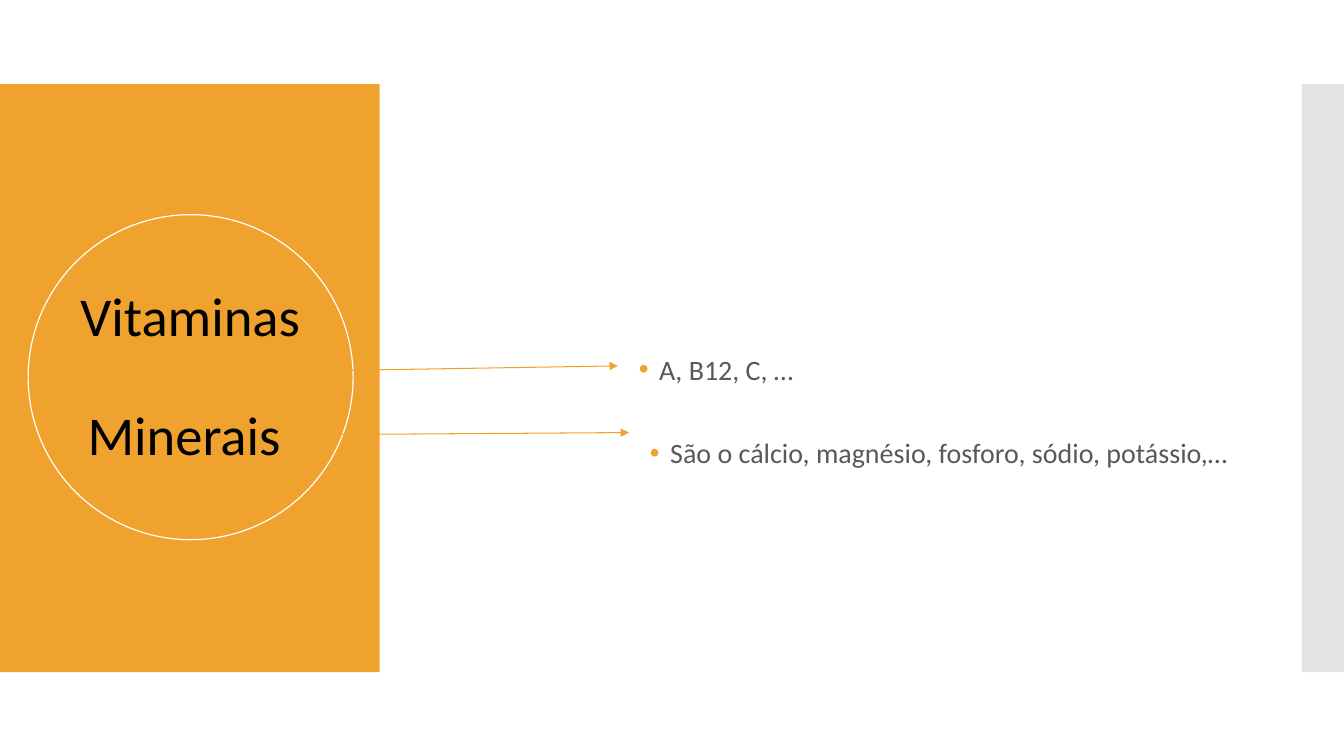
from lxml import etree
from pptx import Presentation
from pptx.dml.color import RGBColor
from pptx.enum.shapes import MSO_CONNECTOR, MSO_SHAPE
from pptx.enum.text import MSO_ANCHOR, PP_ALIGN
from pptx.oxml.ns import qn
from pptx.util import Cm, Pt

ORANGE = RGBColor(0xF0, 0xA2, 0x2E)
SILVER = RGBColor(0xC8, 0xC8, 0xC8)
GRAY = RGBColor(0x59, 0x59, 0x59)
BLACK = RGBColor(0, 0, 0)
WHITE = RGBColor(0xFF, 0xFF, 0xFF)
RECT = MSO_SHAPE.RECTANGLE
OVAL = MSO_SHAPE.OVAL
STRAIGHT = MSO_CONNECTOR.STRAIGHT
MIDDLE = MSO_ANCHOR.MIDDLE
LEFT = PP_ALIGN.LEFT
CENTER = PP_ALIGN.CENTER
FONT = "Calibri"


def add_shape(slide, kind, box, fill, alpha=None, line=None):
    shape = slide.shapes.add_shape(kind, *map(Cm, box))
    shape.shadow.inherit = False
    shape.fill.solid()
    shape.fill.fore_color.rgb = fill
    if alpha is not None:
        color = shape.fill._xPr.find(qn("a:solidFill"))[0]
        etree.SubElement(color, qn("a:alpha"), val=str(alpha * 1000))
    if line is None:
        shape.line.fill.background()
    else:
        shape.line.color.rgb = line
        shape.line.width = Pt(0.85)


def add_bullet(para, color):
    props = para._p.get_or_add_pPr()
    props.set("marL", str(Cm(0.51)))
    props.set("indent", str(-Cm(0.51)))
    tint = etree.SubElement(props, qn("a:buClr"))
    etree.SubElement(tint, qn("a:srgbClr"), val=str(color))
    etree.SubElement(props, qn("a:buFont"), typeface="Arial")
    etree.SubElement(props, qn("a:buChar"), char="•")


def add_text(slide, box, lines, size=20, color=GRAY, align=LEFT,
             bullet=None, inset=None, gap=0):
    frame = slide.shapes.add_textbox(*map(Cm, box)).text_frame
    frame.word_wrap = True
    frame.vertical_anchor = MIDDLE
    if inset is not None:
        frame.margin_left = frame.margin_right = Cm(inset)
        frame.margin_top = frame.margin_bottom = Cm(inset)
    for index, line in enumerate(lines):
        para = frame.add_paragraph() if index else frame.paragraphs[0]
        para.alignment = align
        para.line_spacing = 0.9
        if index:
            para.space_before = Pt(gap)
        if bullet is not None:
            add_bullet(para, bullet)
        run = para.add_run()
        run.text = line
        run.font.name = FONT
        run.font.size = Pt(size)
        run.font.color.rgb = color


def add_arrow(slide, start, end):
    arrow = slide.shapes.add_connector(STRAIGHT, *map(Cm, start + end))
    arrow.line.color.rgb = ORANGE
    arrow.line.width = Pt(0.75)
    etree.SubElement(arrow.line._get_or_add_ln(), qn("a:tailEnd"), type="triangle")
    etree.SubElement(arrow._element.spPr, qn("a:effectLst"))


def main():
    deck = Presentation()
    deck.slide_width = Cm(33.87)
    deck.slide_height = Cm(19.05)
    slide = deck.slides.add_slide(deck.slide_layouts[6])

    add_shape(slide, RECT, (0, 2.12, 9.57, 14.82), ORANGE)
    add_shape(slide, RECT, (32.81, 2.12, 1.06, 14.82), SILVER, alpha=50)
    add_shape(slide, OVAL, (0.71, 5.41, 8.19, 8.19), ORANGE, alpha=50, line=WHITE)
    add_text(slide, (1.9, 6.63, 5.79, 5.79), ["Vitaminas", "Minerais "],
             size=39, color=BLACK, align=CENTER, inset=0, gap=43)

    add_text(slide, (16.13, 9.52, 15.88, 3.86),
             ["São o cálcio, magnésio, fosforo, sódio, potássio,…"], bullet=ORANGE)
    add_arrow(slide, (7.62, 9.35), (15.57, 9.22))
    add_arrow(slide, (8.53, 10.95), (15.85, 10.9))
    add_text(slide, (15.85, 7.42, 15.88, 3.86), ["A, B12, C, …"], bullet=ORANGE)

    deck.save("out.pptx")


if __name__ == "__main__":
    main()
